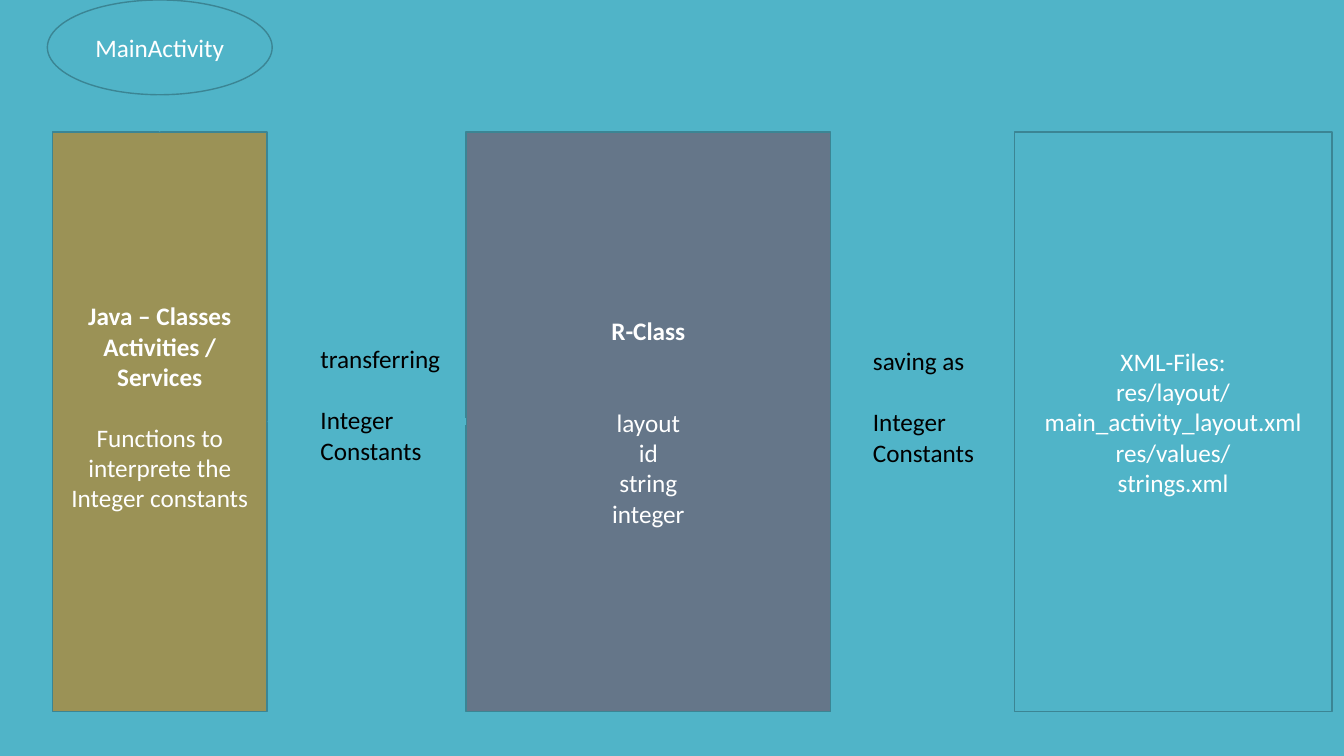
import pptx
import pptx.util
from pptx.dml.color import RGBColor
from pptx.enum.shapes import MSO_CONNECTOR, MSO_SHAPE
from pptx.enum.text import MSO_ANCHOR, MSO_AUTO_SIZE, PP_ALIGN
from pptx.oxml.ns import qn
from pptx.util import Inches
import lxml.etree

COLORS = {
    "background": "50B4C8",
    "outline": "3B8594",
    "java": "9B9256",
    "r_class": "657689",
    "light": "FFFFFF",
    "dark": "000000",
}
LINE_HEIGHT = 22
COLUMN_TOP, COLUMN_HEIGHT = 1.31, 5.75
ARROW_Y = COLUMN_TOP + COLUMN_HEIGHT / 2
TOP, LEFT, BOTTOM, RIGHT = 0, 1, 2, 3


def color(name):
    return RGBColor.from_string(COLORS[name])


def write(frame, text, *, ink="light", align=PP_ALIGN.CENTER, anchor=MSO_ANCHOR.MIDDLE,
          bold_count=0, gap_before=None, gap_lines=1):
    """Write one paragraph per line; bold the first ones and open a gap before one."""
    frame.word_wrap = True
    frame.vertical_anchor = anchor
    for index, line in enumerate(text.split("\n")):
        paragraph = frame.paragraphs[0] if index == 0 else frame.add_paragraph()
        paragraph.alignment = align
        if index == gap_before:
            paragraph.space_before = pptx.util.Pt(gap_lines * LINE_HEIGHT)
        run = paragraph.add_run()
        run.text = line
        run.font.name = "Calibri"
        run.font.size = pptx.util.Pt(18)
        run.font.bold = index < bold_count
        run.font.color.rgb = color(ink)


def add_block(slide, kind, left, top, width, height, fill, text, **text_format):
    block = slide.shapes.add_shape(
        kind, Inches(left), Inches(top), Inches(width), Inches(height))
    block.shadow.inherit = False
    block.fill.solid()
    block.fill.fore_color.rgb = color(fill)
    block.line.color.rgb = color("outline")
    block.line.width = pptx.util.Pt(1)
    write(block.text_frame, text, **text_format)
    return block


def add_column(slide, left, width, fill, text, **text_format):
    return add_block(slide, MSO_SHAPE.RECTANGLE, left, COLUMN_TOP, width,
                     COLUMN_HEIGHT, fill, text, **text_format)


def add_caption(slide, left, top, width, height, text):
    caption = slide.shapes.add_textbox(
        Inches(left), Inches(top), Inches(width), Inches(height))
    write(caption.text_frame, text, ink="dark", align=PP_ALIGN.LEFT,
          anchor=MSO_ANCHOR.TOP, gap_before=1)
    caption.text_frame.auto_size = MSO_AUTO_SIZE.SHAPE_TO_FIT_TEXT


def add_arrow(slide, start, end):
    arrow = slide.shapes.add_connector(
        MSO_CONNECTOR.STRAIGHT, *(Inches(value) for value in (*start, *end)))
    arrow.line.color.rgb = color("background")
    arrow.line.width = pptx.util.Pt(5)
    outline = arrow.line._get_or_add_ln()
    lxml.etree.SubElement(outline, qn("a:tailEnd"), type="triangle")
    lxml.etree.SubElement(arrow._element.spPr, qn("a:effectLst"))
    return arrow


def main():
    presentation = pptx.Presentation()
    presentation.slide_width = Inches(13.33)
    presentation.slide_height = Inches(7.5)
    slide = presentation.slides.add_slide(presentation.slide_layouts[6])
    slide.background.fill.solid()
    slide.background.fill.fore_color.rgb = color("background")

    r_class = add_column(slide, 4.62, 3.62, "r_class",
                         "R-Class\nlayout\nid\nstring\ninteger",
                         bold_count=1, gap_before=1, gap_lines=2)
    java = add_column(slide, 0.52, 2.13, "java",
                      "Java – Classes\nActivities /\nServices\n"
                      "Functions to interprete the Integer constants",
                      bold_count=3, gap_before=3)
    java.text_frame.margin_bottom = Inches(0.35)

    # The XML column lies over the start of its arrow.
    saving = add_arrow(slide, (10.06, ARROW_Y), (8.24, ARROW_Y))
    xml_files = add_column(slide, 10.06, 3.15, "background",
                           "XML-Files:\nres/layout/\nmain_activity_layout.xml\n"
                           "res/values/\nstrings.xml")
    saving.begin_connect(xml_files, LEFT)
    saving.end_connect(r_class, RIGHT)

    transferring = add_arrow(slide, (4.62, ARROW_Y), (2.65, ARROW_Y))
    transferring.begin_connect(r_class, LEFT)
    transferring.end_connect(java, RIGHT)

    add_block(slide, MSO_SHAPE.OVAL, 0.47, 0, 2.23, 0.94, "background", "MainActivity")
    activity = add_arrow(slide, (1.59, 0.95), (1.59, COLUMN_TOP))
    activity.end_connect(java, TOP)

    add_caption(slide, 8.56, 3.38, 1.26, 1.62, "saving as\nInteger\nConstants")
    add_caption(slide, 3.08, 3.36, 1.41, 1.92, "transferring\nInteger\nConstants")

    presentation.save("out.pptx")


if __name__ == "__main__":
    main()
